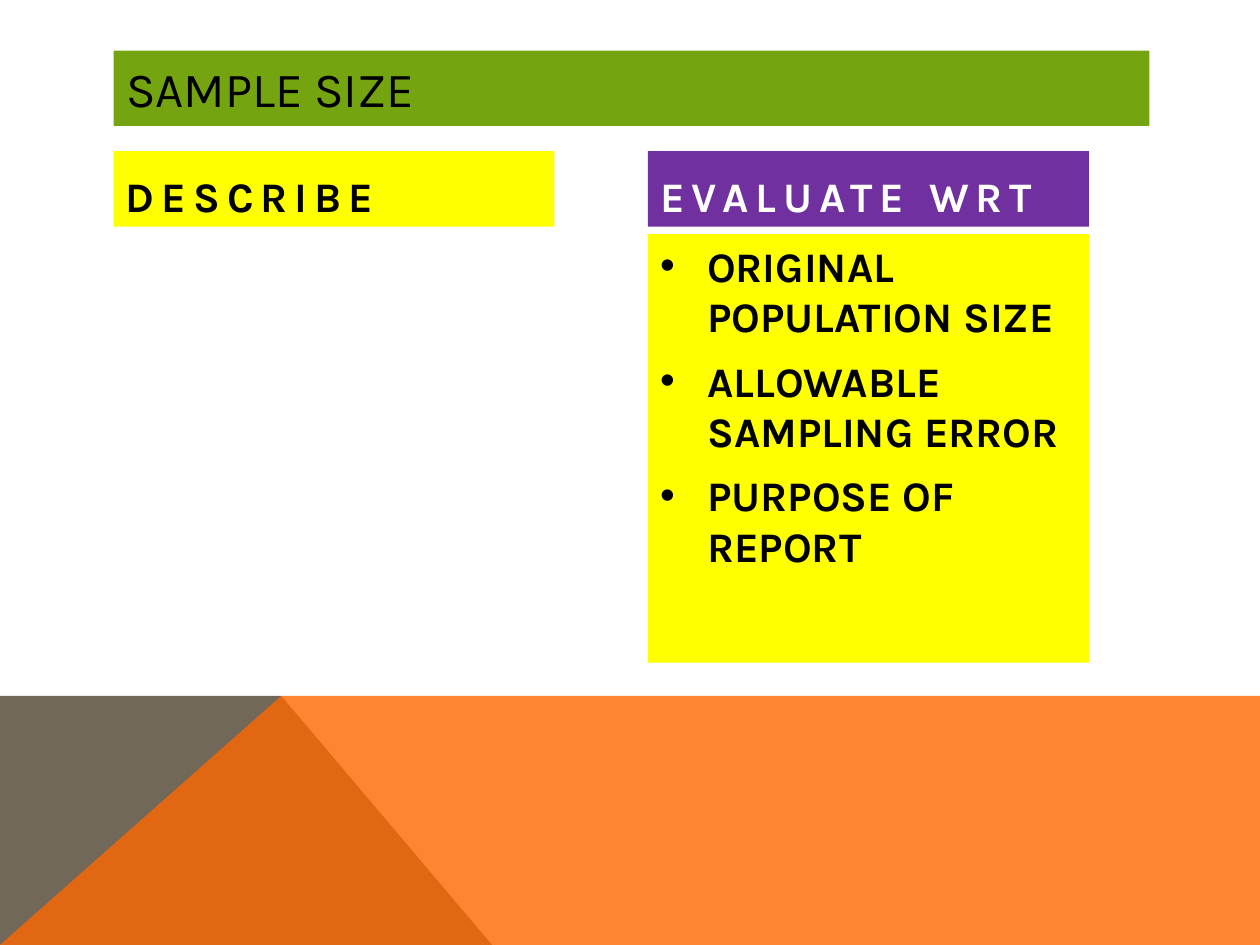
from lxml.etree import SubElement
from pptx import Presentation
from pptx.dml.color import RGBColor
from pptx.enum.shapes import MSO_SHAPE
from pptx.enum.text import MSO_ANCHOR as Anchor, MSO_AUTO_SIZE, PP_ALIGN
from pptx.oxml.ns import qn
from pptx.util import Cm, Pt

BLACK = RGBColor(0x00, 0x00, 0x00)
WHITE = RGBColor(0xFF, 0xFF, 0xFF)
GREEN = RGBColor(0x74, 0xA5, 0x10)
YELLOW = RGBColor(0xFF, 0xFF, 0x00)
PURPLE = RGBColor(0x70, 0x30, 0xA0)
TAUPE = RGBColor(0x71, 0x68, 0x5A)
ORANGE = RGBColor(0xFF, 0x67, 0x00)
FONT = "Karla"

# Content
TITLE = "SAMPLE SIZE"
HEADINGS = [("DESCRIBE", YELLOW, BLACK), ("EVALUATE WRT", PURPLE, WHITE)]
CRITERIA = [
    "ORIGINAL POPULATION SIZE",
    "ALLOWABLE SAMPLING ERROR",
    "PURPOSE OF REPORT",
]

# Layout
WIDTH, HEIGHT = Cm(25.4), Cm(19.05)
LEFT, COLUMN_STEP, COLUMN_WIDTH = Cm(2.29), Cm(10.77), Cm(8.89)
BAR_HEIGHT = Cm(1.52)
TITLE_TOP, TITLE_WIDTH = Cm(1.02), Cm(20.88)
HEADING_TOP = Cm(3.05)
CRITERIA_TOP, CRITERIA_HEIGHT = Cm(4.72), Cm(8.64)
BAND_TOP, PEAK_X, SLOPE_END = Cm(14.03), Cm(5.67), Cm(9.92)
INDENT = Cm(0.95)


def fill_solid(shape, color):
    shape.fill.solid()
    shape.fill.fore_color.rgb = color
    shape.line.fill.background()


def add_band(slide, points, color, opacity=100):
    builder = slide.shapes.build_freeform(*points[0], scale=1.0)
    builder.add_line_segments(points[1:], close=True)
    band = builder.convert_to_shape()
    band.shadow.inherit = False
    fill_solid(band, color)
    if opacity < 100:
        srgb = band.fill._xPr.find(qn("a:solidFill"))[0]
        SubElement(srgb, qn("a:alpha")).set("val", str(opacity * 1000))


def write_text(shape, lines, size, color, anchor, bold=False,
               space_before=0, tracking=0, bulleted=False):
    frame = shape.text_frame
    frame.word_wrap = True
    frame.auto_size = MSO_AUTO_SIZE.NONE
    frame.vertical_anchor = anchor
    for i, line in enumerate(lines):
        paragraph = frame.add_paragraph() if i else frame.paragraphs[0]
        paragraph.alignment = PP_ALIGN.LEFT
        paragraph.space_before = Pt(space_before)
        run = paragraph.add_run()
        run.text = line
        run.font.name = FONT
        run.font.size = Pt(size)
        run.font.bold = bold
        run.font.color.rgb = color
        if tracking:
            run.font._element.set("spc", str(tracking * 100))
        if bulleted:
            props = paragraph._p.get_or_add_pPr()
            props.set("marL", str(INDENT))
            props.set("indent", str(-INDENT))
            SubElement(props, qn("a:buFont")).set("typeface", "Arial")
            SubElement(props, qn("a:buChar")).set("char", "•")


def add_panel(slide, left, top, height, color):
    panel = slide.shapes.add_shape(
        MSO_SHAPE.RECTANGLE, left, top, COLUMN_WIDTH, height)
    panel.shadow.inherit = False
    fill_solid(panel, color)
    return panel


def main():
    deck = Presentation()
    deck.slide_width, deck.slide_height = WIDTH, HEIGHT
    slide = deck.slides.add_slide(deck.slide_layouts[5])

    # Bottom band: taupe slope under a translucent orange one
    add_band(slide, [(0, HEIGHT), (0, BAND_TOP), (PEAK_X, BAND_TOP),
                     (SLOPE_END, HEIGHT)], TAUPE)
    add_band(slide, [(0, HEIGHT), (PEAK_X, BAND_TOP), (WIDTH, BAND_TOP),
                     (WIDTH, HEIGHT)], ORANGE, opacity=80)

    # Title bar
    title = slide.shapes.title
    title.left, title.top = LEFT, TITLE_TOP
    title.width, title.height = TITLE_WIDTH, BAR_HEIGHT
    fill_solid(title, GREEN)
    write_text(title, [TITLE], 28, BLACK, Anchor.MIDDLE)

    # Column headings
    for column, (heading, color, text_color) in enumerate(HEADINGS):
        bar = add_panel(slide, LEFT + column * COLUMN_STEP, HEADING_TOP,
                        BAR_HEIGHT, color)
        write_text(bar, [heading], 24, text_color, Anchor.BOTTOM, bold=True,
                   space_before=8, tracking=4)

    # Evaluation criteria
    criteria = add_panel(slide, LEFT + COLUMN_STEP, CRITERIA_TOP,
                         CRITERIA_HEIGHT, YELLOW)
    write_text(criteria, CRITERIA, 24, BLACK, Anchor.TOP, bold=True,
               space_before=8, bulleted=True)

    deck.save("out.pptx")


if __name__ == "__main__":
    main()
